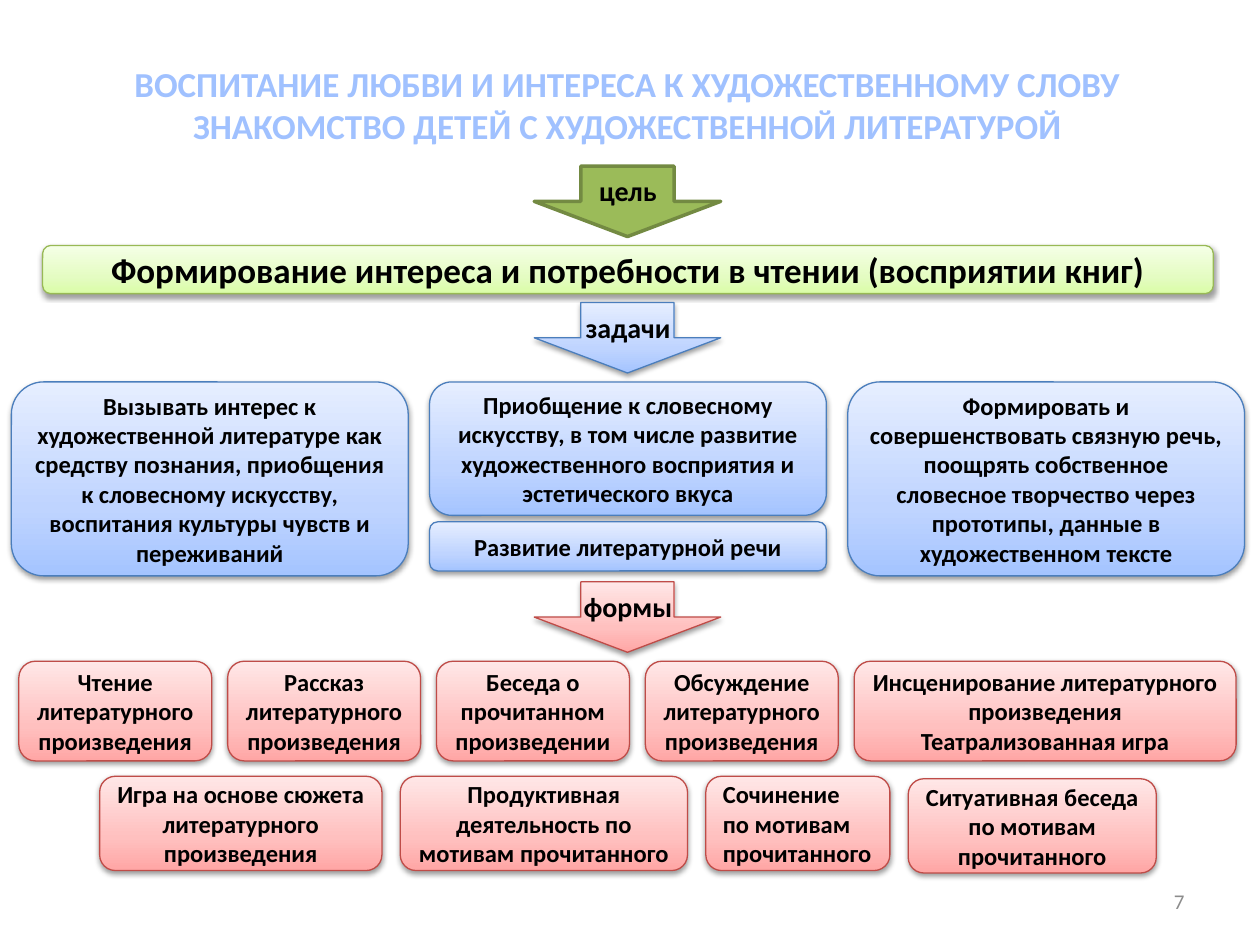
from copy import deepcopy

from lxml import etree
from pptx import Presentation
from pptx import util as u
from pptx.dml.color import RGBColor
from pptx.enum import shapes, text
from pptx.oxml.ns import qn

FONT = "Calibri"
BLACK = RGBColor(0, 0, 0)
GREY = RGBColor(0x8C, 0x8C, 0x8C)
SKY = RGBColor(0xA0, 0xC1, 0xFF)
OLIVE = RGBColor(0x9B, 0xBB, 0x59)
MOSS = RGBColor(0x73, 0x8A, 0x42)
LIME_EDGE = RGBColor(0x98, 0xB9, 0x55)
BLUE_EDGE = RGBColor(0x4B, 0x7E, 0xBC)
RED_EDGE = RGBColor(0xBF, 0x4C, 0x48)
LIME = (RGBColor(0xDA, 0xFD, 0xA7), RGBColor(0xE4, 0xFC, 0xC2), RGBColor(0xF5, 0xFF, 0xE7))
BLUE = (RGBColor(0xA4, 0xC4, 0xFF), RGBColor(0xBF, 0xD4, 0xFF), RGBColor(0xE6, 0xEE, 0xFF))
RED = (RGBColor(0xFF, 0xA6, 0xA5), RGBColor(0xFF, 0xC0, 0xBF), RGBColor(0xFF, 0xE7, 0xE7))
STOPS = (0, 0.35, 1)

MID = text.MSO_ANCHOR.MIDDLE
TOP = text.MSO_ANCHOR.TOP
LEFT, MIDDLE, RIGHT = text.PP_ALIGN.LEFT, text.PP_ALIGN.CENTER, text.PP_ALIGN.RIGHT
ROUND = shapes.MSO_SHAPE.ROUNDED_RECTANGLE
DOWN = shapes.MSO_SHAPE.DOWN_ARROW


def cm(box):
    return [u.Cm(v) for v in box]


def write(shape, words, size, color=BLACK, align=MIDDLE, anchor=MID, bold=True):
    frame = shape.text_frame
    frame.text = words
    frame.word_wrap = True
    frame.vertical_anchor = anchor
    for para in frame.paragraphs:
        para.alignment = align
        for run in para.runs:
            run.font.name = FONT
            run.font.size = u.Pt(size)
            run.font.bold = bold
            run.font.color.rgb = color


def shade(shape, tones):
    fill = shape.fill
    fill.gradient()
    fill.gradient_angle = 90
    props = shape._element.spPr
    stops = props.find(".//" + qn("a:gsLst"))
    stops.append(deepcopy(stops[0]))
    for stop, tone, place in zip(fill.gradient_stops, tones, STOPS):
        stop.color.rgb = tone
        stop.position = place
    cast = etree.SubElement(
        props.find(qn("a:effectLst")), qn("a:outerShdw"),
        blurRad="40000", dist="20000", dir="5400000", rotWithShape="0")
    dark = etree.SubElement(cast, qn("a:srgbClr"), val="000000")
    etree.SubElement(dark, qn("a:alpha"), val="38000")


def draw(slide, kind, box, tones, edge, width=0.75):
    shape = slide.shapes.add_shape(kind, *cm(box))
    shape.shadow.inherit = False
    if isinstance(tones, RGBColor):
        shape.fill.solid()
        shape.fill.fore_color.rgb = tones
    else:
        shade(shape, tones)
    shape.line.color.rgb = edge
    shape.line.width = u.Pt(width)
    return shape


def card(slide, box, words, tones, edge, size=14, align=MIDDLE):
    write(draw(slide, ROUND, box, tones, edge), words, size, align=align)


def label(slide, box, words, size, **style):
    write(slide.shapes.add_textbox(*cm(box)), words, size, **style)


def arrow(slide, top, words, tones, edge, width=0.75):
    draw(slide, DOWN, (10.77, top, 3.76, 1.42), tones, edge, width)
    label(slide, (9.88, top + 0.03, 5.56, 1.39), words, 16, anchor=TOP)


def head(slide, box):
    title = slide.shapes.title
    title.left, title.top, title.width, title.height = cm(box)
    write(title, "ВОСПИТАНИЕ ЛЮБВИ И ИНТЕРЕСА К ХУДОЖЕСТВЕННОМУ СЛОВУ\n"
          "ЗНАКОМСТВО ДЕТЕЙ С ХУДОЖЕСТВЕННОЙ ЛИТЕРАТУРОЙ", 20, SKY, anchor=TOP)


def goal(slide, box):
    x, y, w, h = box
    card(slide, (x, y + 1.6, w, h - 1.6),
         "Формирование интереса и потребности в чтении (восприятии книг)",
         LIME, LIME_EDGE, 20)
    arrow(slide, y, "цель", OLIVE, MOSS, 2)


def tasks(slide, box):
    x, y, w, h = box
    gap, top = 0.43, y + 1.6
    wide, tall = (w - 2 * gap) / 3, h - 1.6
    step = wide + gap
    cards = (
        (0, 0, tall, "Вызывать интерес к художественной литературе как средству познания, "
         "приобщения к словесному искусству, воспитания культуры чувств и переживаний"),
        (1, 0, 2.69, "Приобщение к словесному искусству, в том числе развитие "
         "художественного восприятия и эстетического вкуса"),
        (2, 0, tall, "Формировать и совершенствовать связную речь, поощрять собственное "
         "словесное творчество через прототипы, данные в художественном тексте"),
        (1, 2.82, 0.99, "Развитие литературной речи"),
    )
    for col, drop, high, words in cards:
        card(slide, (x + col * step, top + drop, wide, high), words, BLUE, BLUE_EDGE)
    arrow(slide, y, "задачи", BLUE, BLUE_EDGE)


def row(slide, x, y, high, gap, cards):
    for wide, drop, align, words in cards:
        card(slide, (x, y + drop, wide, high), words, RED, RED_EDGE, align=align)
        x += wide + gap


def forms(slide, box):
    x, y, w, h = box
    small = 3.89
    gap = 0.32
    first = [(small, 0, MIDDLE, words) for words in (
        "Чтение литературного произведения",
        "Рассказ литературного произведения",
        "Беседа о прочитанном произведении",
        "Обсуждение литературного произведения")]
    first.append((w - 4 * (small + gap), 0, MIDDLE,
                  "Инсценирование литературного\nпроизведения\nТеатрализованная игра"))
    second = (
        (5.69, 0, MIDDLE, "Игра на основе сюжета литературного произведения"),
        (5.79, 0, MIDDLE, "Продуктивная\nдеятельность по\nмотивам прочитанного"),
        (3.71, 0, LEFT, "Сочинение\nпо мотивам прочитанного"),
        (5, 0.05, MIDDLE, "Ситуативная беседа\nпо мотивам прочитанного"),
    )
    row(slide, x, y + 1.6, 2.01, gap, first)
    row(slide, x + 1.63, y + h - 1.9, 1.9, 0.37, second)
    arrow(slide, y, "формы", RED, RED_EDGE)


def main():
    deck = Presentation()
    deck.slide_width, deck.slide_height = cm((25.4, 19.05))
    slide = deck.slides.add_slide(deck.slide_layouts[5])
    head(slide, (1.55, 1.14, 22.2, 1.96))
    goal(slide, (0.86, 3.35, 23.6, 2.57))
    tasks(slide, (0.23, 6.1, 24.86, 5.51))
    forms(slide, (0.38, 11.73, 24.54, 5.82))
    label(slide, (18.2, 17.66, 5.93, 1.01), "7", 12, color=GREY, align=RIGHT, bold=False)
    deck.save("out.pptx")


if __name__ == "__main__":
    main()
